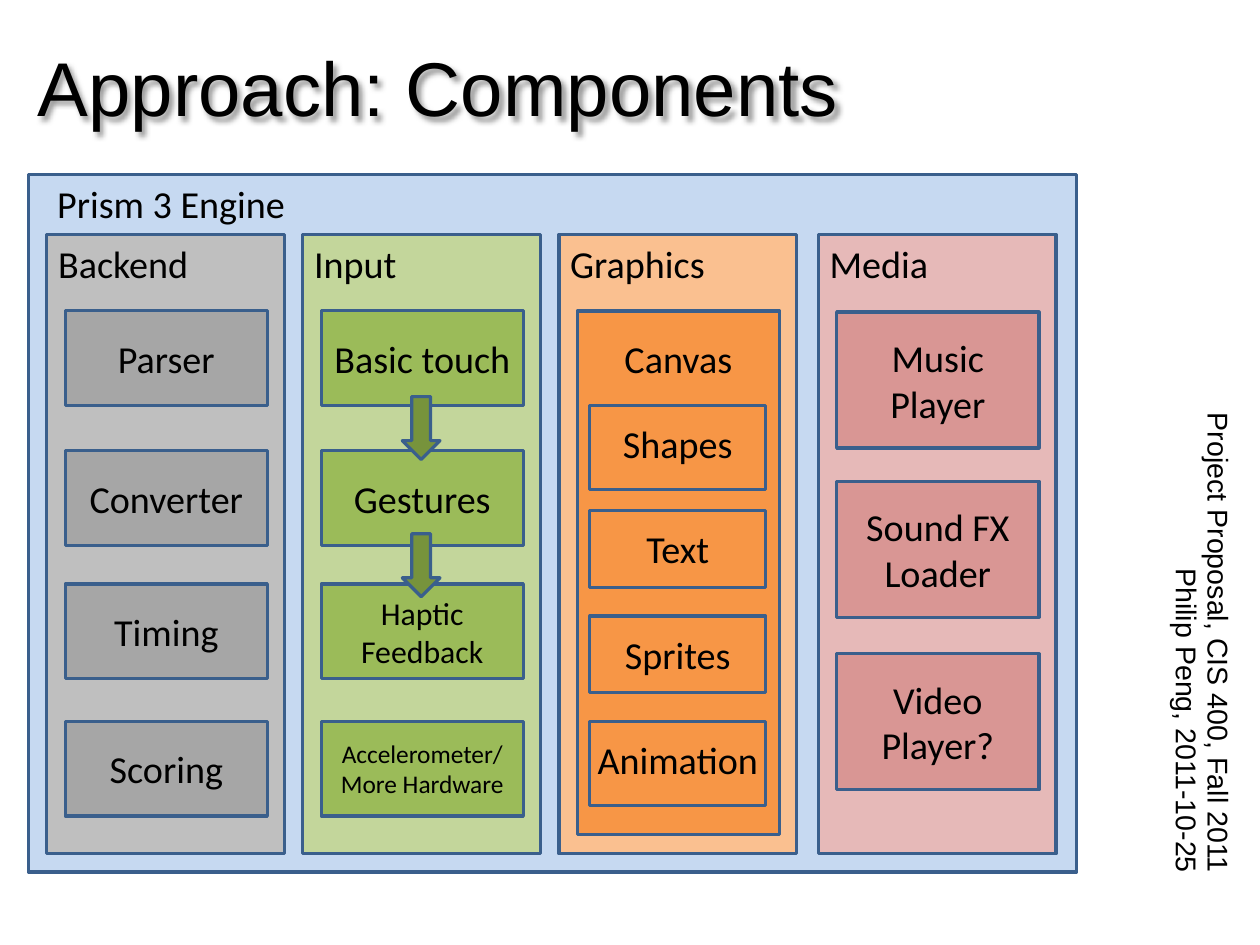
from dataclasses import dataclass

from pptx import Presentation
from pptx.dml.color import RGBColor
from pptx.enum.shapes import MSO_SHAPE as SHAPE
from pptx.enum.text import MSO_ANCHOR as ANCHOR, PP_ALIGN as ALIGN
from pptx.oxml import parse_xml
from pptx.oxml.ns import nsdecls, qn
from pptx.util import Inches, Pt


@dataclass(frozen=True)
class Theme:
    heading_font: str = "Arial"
    body_font: str = "Calibri"
    title_size: int = 48
    label_size: int = 24
    medium_size: int = 20
    credit_size: int = 18
    small_size: int = 16
    text: str = "000000"
    outline: str = "3A5F8C"
    engine: str = "C6D9F1"
    backend: tuple = ("BFBFBF", "A6A6A6")
    input: tuple = ("C3D69B", "9BBB59")
    graphics: tuple = ("FAC090", "F79646")
    media: tuple = ("E6B9B8", "D99694")
    arrow: str = "77933C"


THEME = Theme()
CM_PER_INCH = 2.54
COLUMN_TOP, COLUMN_W, COLUMN_H = 2.05, 2.08, 5.42
BOX_INDENT, BOX_W, BOX_H = 0.16, 1.77, 0.83
ROW_TOPS = (2.72, 3.94, 5.11, 6.31)
MEDIA_TOPS = (2.73, 4.21, 5.72)


def style_text(p, font, size, align):
    p.alignment = align
    p.font.name = font
    p.font.size = Pt(size)
    p.font.color.rgb = RGBColor.from_string(THEME.text)


def add_block(slide, shape, x, y, w, h, fill):
    sp = slide.shapes.add_shape(shape, Inches(x), Inches(y), Inches(w), Inches(h))
    sp.shadow.inherit = False
    sp.fill.solid()
    sp.fill.fore_color.rgb = RGBColor.from_string(fill)
    sp.line.color.rgb = RGBColor.from_string(THEME.outline)
    sp.line.width = Pt(2)
    return sp


def add_box(slide, text, x, y, w, h, fill, size=THEME.label_size, inset=0.1):
    """Rectangle with a centred label."""
    sp = add_block(slide, SHAPE.RECTANGLE, x, y, w, h, fill)
    tf = sp.text_frame
    tf.word_wrap = True
    tf.vertical_anchor = ANCHOR.MIDDLE
    tf.margin_left = tf.margin_right = Inches(inset)
    tf.text = text
    style_text(tf.paragraphs[0], THEME.body_font, size, ALIGN.CENTER)
    return sp


def add_panel(slide, text, x, y, w, h, fill, inset=0.1, top=0.05, align=ALIGN.LEFT):
    """Rectangle with its label at the top."""
    sp = add_box(slide, text, x, y, w, h, fill, inset=inset)
    tf = sp.text_frame
    tf.vertical_anchor = ANCHOR.TOP
    tf.margin_top = Inches(top)
    tf.paragraphs[0].alignment = align


def add_column(slide, text, x, fill):
    add_panel(slide, text, x, COLUMN_TOP, COLUMN_W, COLUMN_H, fill)


def add_title(slide, text):
    sp = slide.shapes.title
    sp.left, sp.top, sp.width, sp.height = map(Inches, (0.23, 0.3, 10.63, 0.91))
    sp.text_frame.text = text
    style_text(sp.text_frame.paragraphs[0], THEME.heading_font, THEME.title_size, ALIGN.LEFT)
    # Soft shadow behind the letters
    sp._element.spPr.append(parse_xml(
        f'<a:effectLst {nsdecls("a")}><a:outerShdw blurRad="38100" dist="38100" dir="2700000">'
        '<a:srgbClr val="000000"><a:alpha val="40000"/></a:srgbClr>'
        '</a:outerShdw></a:effectLst>'))


def add_credit(slide, lines):
    """Text running down the right edge."""
    sp = slide.shapes.add_textbox(Inches(10.1), Inches(3.54), Inches(0.76), Inches(4.49))
    tf = sp.text_frame
    tf.word_wrap = True
    tf.margin_left, tf.margin_right = Inches(0.02), Inches(0.07)
    tf.margin_top, tf.margin_bottom = Inches(0.07), Inches(0.34)
    tf._txBody.find(qn("a:bodyPr")).set("vert", "eaVert")
    for i, line in enumerate(lines):
        p = tf.add_paragraph() if i else tf.paragraphs[0]
        p.text = line
        p.line_spacing = 0.93
        style_text(p, THEME.heading_font, THEME.credit_size, ALIGN.RIGHT)


def main():
    prs = Presentation()
    prs.slide_width, prs.slide_height = Inches(28 / CM_PER_INCH), Inches(21 / CM_PER_INCH)
    slide = prs.slides.add_slide(prs.slide_layouts[5])
    add_title(slide, "Approach: Components")
    add_credit(slide, ("Project Proposal, CIS 400, Fall 2011", "Philip Peng, 2011-10-25"))
    add_panel(slide, "Prism 3 Engine", 0.25, 1.53, 9.17, 6.1, THEME.engine, inset=0.25)

    # Backend and input columns share their rows
    label, medium, small = THEME.label_size, THEME.medium_size, THEME.small_size
    row_columns = (
        ("Backend", 0.41, THEME.backend,
         (("Parser", label), ("Converter", label), ("Timing", label), ("Scoring", label))),
        ("Input", 2.65, THEME.input,
         (("Basic touch", label), ("Gestures", label), ("Haptic Feedback", medium),
          ("Accelerometer/ More Hardware", small))),
    )
    for name, x, (light, dark), boxes in row_columns:
        add_column(slide, name, x, light)
        for y, (text, size) in zip(ROW_TOPS, boxes):
            add_box(slide, text, x + BOX_INDENT, y, BOX_W, BOX_H, dark, size)
    for y in (3.47, 4.67):
        add_block(slide, SHAPE.DOWN_ARROW, 3.52, y, 0.33, 0.55, THEME.arrow)

    # Graphics column: canvas holding its parts
    x, (light, dark) = 4.89, THEME.graphics
    add_column(slide, "Graphics", x, light)
    add_panel(slide, "Canvas", x + BOX_INDENT, 2.72, BOX_W, 4.58, dark,
              top=0.21, align=ALIGN.CENTER)
    parts = (("Shapes", 0.73), ("Text", 0.67), ("Sprites", 0.67), ("Animation", 0.74))
    for i, (text, h) in enumerate(parts):
        add_panel(slide, text, 5.16, 3.55 + 0.92 * i, 1.54, h, dark,
                  inset=0.02, top=0.13, align=ALIGN.CENTER)

    # Media column
    x, (light, dark) = 7.16, THEME.media
    add_column(slide, "Media", x, light)
    for y, text in zip(MEDIA_TOPS, ("Music Player", "Sound FX Loader", "Video Player?")):
        add_box(slide, text, x + BOX_INDENT, y, BOX_W, 1.19, dark)

    prs.save("out.pptx")


if __name__ == "__main__":
    main()
